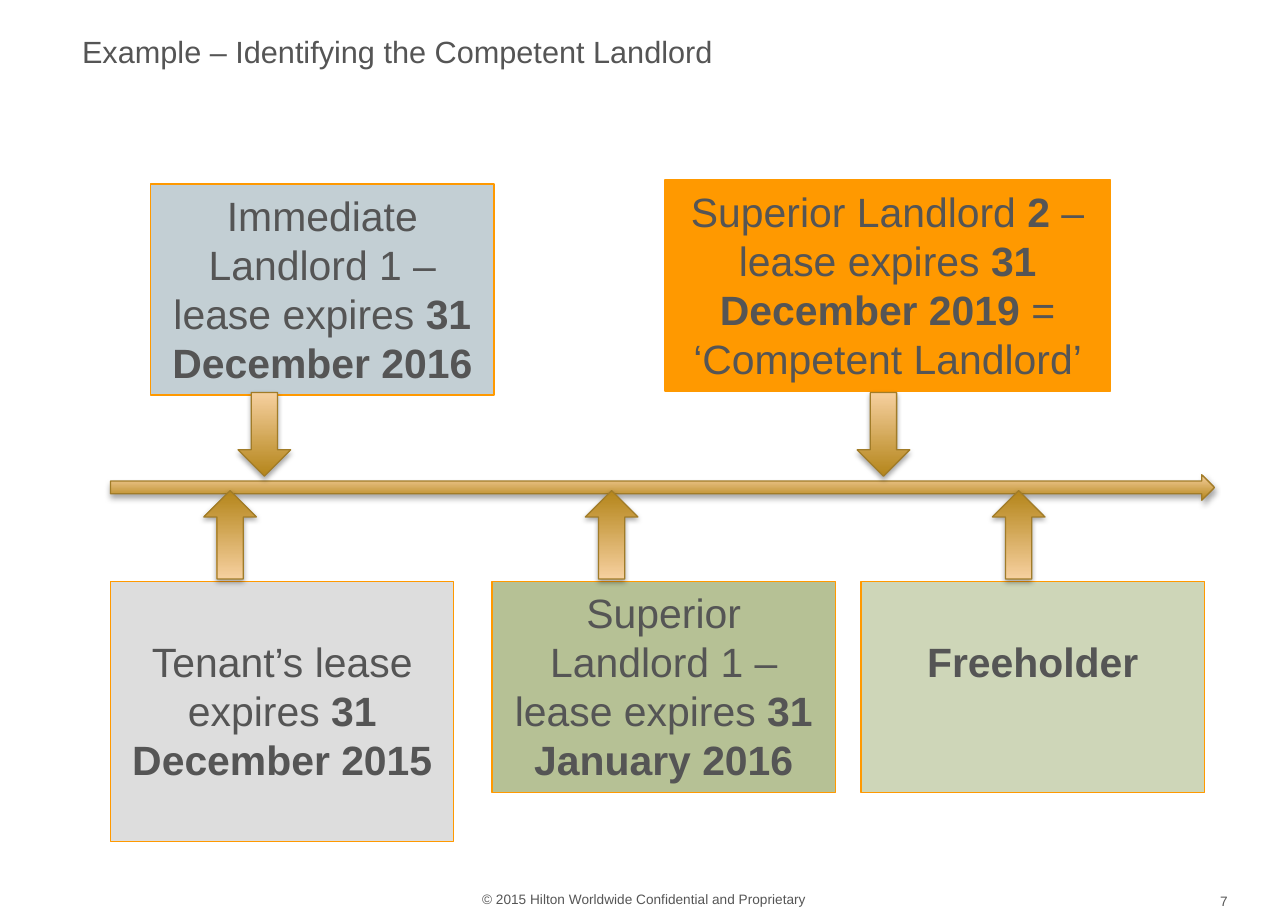
from lxml import etree
from pptx import Presentation
from pptx.dml.color import RGBColor
from pptx.enum.shapes import MSO_SHAPE
from pptx.enum.text import MSO_ANCHOR, PP_ALIGN
from pptx.oxml.ns import qn
from pptx.util import Cm, Pt

RECTANGLE = MSO_SHAPE.RECTANGLE
RIGHT_ARROW, UP_ARROW, DOWN_ARROW = MSO_SHAPE.RIGHT_ARROW, MSO_SHAPE.UP_ARROW, MSO_SHAPE.DOWN_ARROW
TOP, MIDDLE, BOTTOM = MSO_ANCHOR.TOP, MSO_ANCHOR.MIDDLE, MSO_ANCHOR.BOTTOM
LEFT, CENTER, RIGHT = PP_ALIGN.LEFT, PP_ALIGN.CENTER, PP_ALIGN.RIGHT

INK = RGBColor(0x55, 0x55, 0x55)
ORANGE = RGBColor(0xFF, 0x99, 0x00)
BLUE_GREY = RGBColor(0xC3, 0xCF, 0xD4)
LIGHT_GREY = RGBColor(0xDD, 0xDD, 0xDD)
SAGE = RGBColor(0xB6, 0xC1, 0x95)
PALE_SAGE = RGBColor(0xCE, 0xD6, 0xB8)
DARK_GOLD = RGBColor(0xB4, 0x85, 0x1A)
LIGHT_GOLD = RGBColor(0xF6, 0xD0, 0x9F)
GOLD_EDGE = RGBColor(0xA1, 0x7C, 0x28)

ONE_LINE = 1.02
PARTY_WIDTH, PARTY_HEIGHT = 7.11, 4.37
LOWER_TOP = 12.04


class TimelineSlide:
    font_name = "Arial"
    line_width = Pt(0.75)

    def __init__(self, deck):
        self.page = deck.slides.add_slide(deck.slide_layouts[6])

    def fill_text(self, shape, runs, size, align, **frame_format):
        frame = shape.text_frame
        for name, value in {"word_wrap": True, **frame_format}.items():
            setattr(frame, name, value)
        para = frame.paragraphs[0]
        para.alignment = align
        for text, bold in runs:
            span = para.add_run()
            span.text = text
            font_format = {"name": self.font_name, "size": Pt(size), "bold": bold}
            for name, value in font_format.items():
                setattr(span.font, name, value)
            span.font.color.rgb = INK

    def label(self, text, place, size, align, **frame_format):
        box = self.page.shapes.add_textbox(*map(Cm, place))
        self.fill_text(box, [(text, False)], size, align, **frame_format)

    def shape(self, kind, place, edge):
        shape = self.page.shapes.add_shape(kind, *map(Cm, place))
        shape.shadow.inherit = False
        shape.line.color.rgb = edge
        shape.line.width = self.line_width
        return shape

    def party(self, place, color, runs, lines_above=0):
        box = self.shape(RECTANGLE, place, ORANGE)
        box.fill.solid()
        box.fill.fore_color.rgb = color
        margin = Cm(0.13 + lines_above * ONE_LINE)
        self.fill_text(box, runs, 24, CENTER, vertical_anchor=TOP, margin_top=margin)

    def arrow(self, kind, place):
        arrow = self.shape(kind, place, GOLD_EDGE)
        arrow.fill.gradient()
        arrow.fill.gradient_angle = 270 if kind == UP_ARROW else 90
        for stop, color in zip(arrow.fill.gradient_stops, (DARK_GOLD, LIGHT_GOLD)):
            stop.color.rgb = color
        effects = arrow._element.spPr.find(qn("a:effectLst"))
        shadow = etree.SubElement(effects, qn("a:outerShdw"), blurRad=str(Pt(3.1)),
                                  dist=str(Pt(1.8)), dir="5400000", rotWithShape="0")
        color = etree.SubElement(shadow, qn("a:srgbClr"), val="000000")
        etree.SubElement(color, qn("a:alpha"), val="35000")


def main():
    deck = Presentation()
    deck.slide_width, deck.slide_height = Cm(26.67), Cm(19.05)
    slide = TimelineSlide(deck)

    slide.label("Example – Identifying the Competent Landlord",
                (1.45, 0.56, 20.17, ONE_LINE), 18, LEFT)
    slide.label("© 2015 Hilton Worldwide Confidential and Proprietary",
                (9.53, 18.31, 7.62, 0.61), 8, CENTER, vertical_anchor=BOTTOM)
    slide.label("7", (19.2, 18.14, 6.22, ONE_LINE), 8, RIGHT,
                vertical_anchor=MIDDLE, margin_left=0, margin_right=0)

    slide.arrow(RIGHT_ARROW, (2.29, 9.83, 22.86, 0.53))

    slide.party((3.12, 3.81, PARTY_WIDTH, PARTY_HEIGHT), BLUE_GREY,
                [("Immediate Landlord 1 – lease expires ", False), ("31 December 2016", True)])
    slide.party((13.77, 3.73, 9.22, PARTY_HEIGHT), ORANGE,
                [("Superior Landlord ", False), ("2", True), (" – lease expires ", False),
                 ("31 December 2019 ", True), ("= ‘Competent Landlord’", False)])
    slide.party((2.29, LOWER_TOP, PARTY_WIDTH, 5.38), LIGHT_GREY,
                [("Tenant’s lease expires ", False), ("31 December 2015", True)], lines_above=1)
    slide.party((10.19, LOWER_TOP, PARTY_WIDTH, PARTY_HEIGHT), SAGE,
                [("Superior Landlord 1 – lease expires ", False), ("31 January 2016", True)])
    slide.party((17.83, LOWER_TOP, PARTY_WIDTH, PARTY_HEIGHT), PALE_SAGE,
                [("Freeholder", True)], lines_above=1)

    for left in (4.22, 12.12, 20.55):
        slide.arrow(UP_ARROW, (left, 10.16, 1.09, 1.83))
    for left in (4.93, 17.75):
        slide.arrow(DOWN_ARROW, (left, 8.13, 1.09, 1.73))

    deck.save("out.pptx")


if __name__ == "__main__":
    main()
